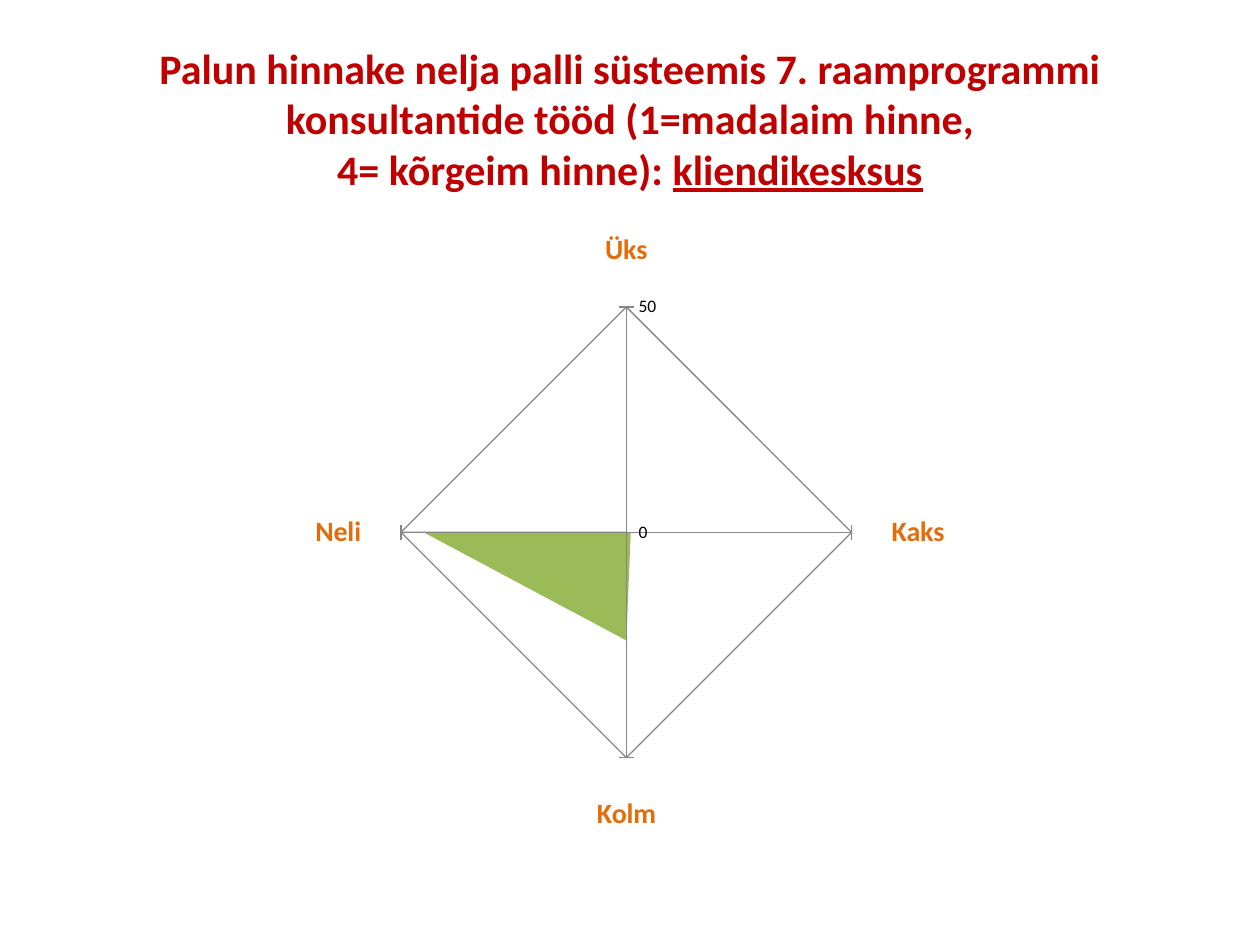
from pptx import Presentation
from pptx import util as u
from pptx.chart.data import CategoryChartData
from pptx.dml.color import RGBColor
from pptx.enum import chart as charts, text

WIDTH, HEIGHT = u.Inches(10), u.Inches(7.5)
TITLE_BOX = (0.05, 0.04, 0.9, 0.17)
CHART_BOX = (0.05, 0.7 / 3, 0.9, 0.66)
RED, ORANGE, GREEN, GREY, BLACK = "C00000", "E46C0A", "9BBB59", "868686", "000000"


def color(value):
    return RGBColor.from_string(value)


def scale(box):
    return [round(share * side) for share, side in zip(box, (WIDTH, HEIGHT) * 2)]


def apply(target, values):
    for name, value in values.items():
        setattr(target, name, value)


def format_font(font, size, shade, **values):
    apply(font, {"name": "Calibri", "size": u.Pt(size), **values})
    font.color.rgb = color(shade)


def format_line(line, shade):
    line.color.rgb = color(shade)
    line.width = u.Pt(0.75)


def add_title(slide, box):
    title = slide.shapes.title
    apply(title, dict(zip(("left", "top", "width", "height"), scale(box))))
    frame = title.text_frame
    apply(frame, {"word_wrap": True, "auto_size": text.MSO_AUTO_SIZE.NONE,
                  "vertical_anchor": text.MSO_ANCHOR.MIDDLE})
    paragraph = frame.paragraphs[0]
    paragraph.alignment = text.PP_ALIGN.CENTER
    lines = [
        ("Palun hinnake nelja palli süsteemis 7. raamprogrammi "
         "konsultantide tööd (1=madalaim hinne,", False),
        ("4= kõrgeim hinne): ", False),
        ("kliendikesksus", True),
    ]
    for index, (words, underlined) in enumerate(lines):
        if index == 1:
            paragraph.add_line_break()
        run = paragraph.add_run()
        run.text = words
        format_font(run.font, 24, RED, bold=True, underline=underlined)


def add_rating_chart(slide, box):
    data = CategoryChartData()
    data.categories = ["Üks", "Kaks", "Kolm", "Neli"]
    data.add_series("Series 1", (0, 1, 24, 45))
    chart = slide.shapes.add_chart(
        charts.XL_CHART_TYPE.RADAR_FILLED, *scale(box), data).chart
    apply(chart, {"has_legend": False, "has_title": False})
    format_font(chart.font, 10, BLACK)

    fill = chart.plots[0].series[0].format.fill
    fill.solid()
    fill.fore_color.rgb = color(GREEN)

    category_axis, value_axis = chart.category_axis, chart.value_axis
    apply(category_axis, {"has_major_gridlines": True,
                          "major_tick_mark": charts.XL_TICK_MARK.NONE})
    format_font(category_axis.tick_labels.font, 16, ORANGE, bold=True)
    apply(value_axis, {"minimum_scale": 0, "maximum_scale": 50, "major_unit": 50,
                       "has_major_gridlines": True,
                       "major_tick_mark": charts.XL_TICK_MARK.CROSS,
                       "minor_tick_mark": charts.XL_TICK_MARK.NONE})
    format_font(value_axis.tick_labels.font, 10, BLACK, bold=False)
    for line in (category_axis.major_gridlines.format.line,
                 value_axis.major_gridlines.format.line, value_axis.format.line):
        format_line(line, GREY)
    category_axis.format.line.fill.background()


def main():
    presentation = Presentation()
    apply(presentation, {"slide_width": WIDTH, "slide_height": HEIGHT})
    slide = presentation.slides.add_slide(presentation.slide_layouts[5])
    add_title(slide, TITLE_BOX)
    add_rating_chart(slide, CHART_BOX)
    presentation.save("out.pptx")


if __name__ == "__main__":
    main()
